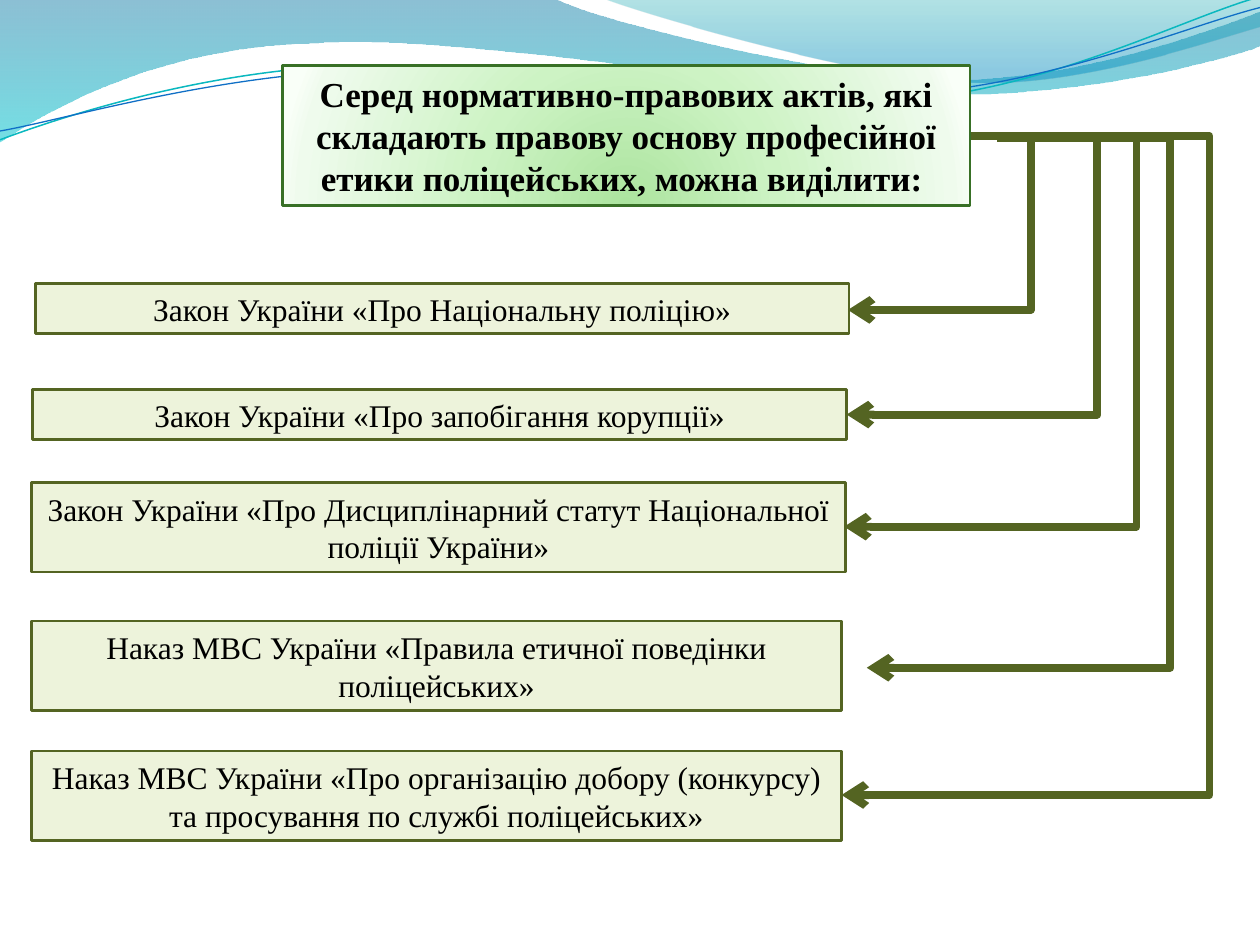
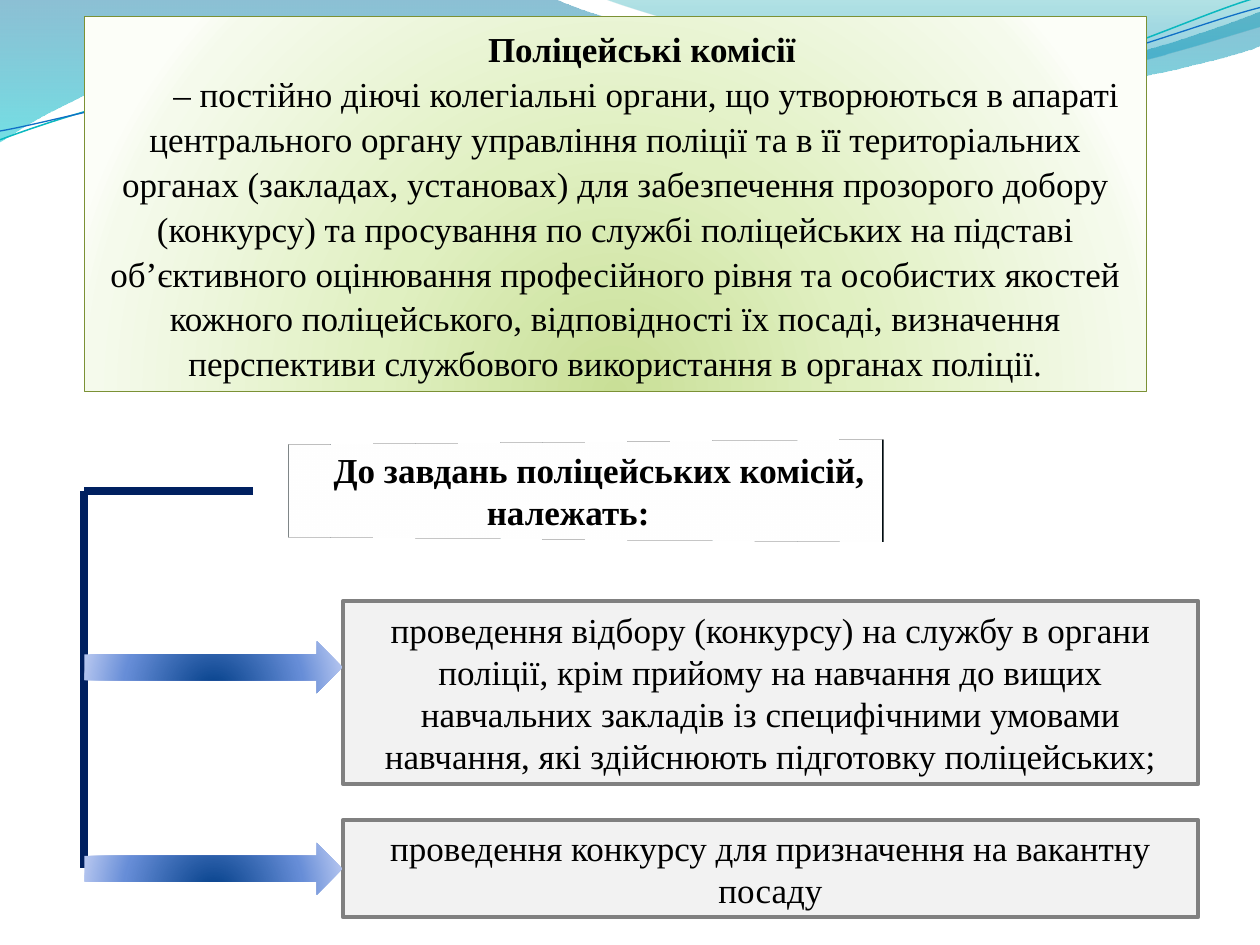
from lxml import etree
from pptx import Presentation
from pptx.dml.color import RGBColor
from pptx.enum import shapes, text
from pptx.oxml import ns
from pptx.util import Inches, Pt

FONT = "Times New Roman"
COLORS = {
    "black": "000000", "teal_line": "0AB8BF", "blue_line": "0F6FC6",
    "title_line": "387026", "law_fill": "EDF3DB", "law_line": "546422",
    "definition_line": "7B9135", "plate": "DBF5F9", "plate_line": "03495C",
    "task_fill": "F2F2F2", "task_line": "808080", "navy": "002060",
}
GRADIENTS = {
    "main_wave": [(0, "0074A1", 45), (100, "00C6CF", 55)],
    "right_wave": [(0, "00A1A9", 30), (80, "008BBF", 45)],
    "green": [(0, "ACE49F", 100), (43, "CDF3C4", 100), (93, "EFFBED", 100), (100, "F9FFF8", 100)],
    "olive": [(0, "C9DF97", 100), (43, "E0F0C1", 100), (93, "F5FAEC", 100), (100, "FCFEF8", 100)],
    "blue": [(0, "003D87", 100), (68, "668DD7", 100), (100, "B3C4EF", 100)],
}
FILLED_WAVES = [
    ("main_wave", (0, 0), [
        [(4.4, -0.01)],
        [(4.76, 0.17), (6.64, 0.63), (7.58, 0.63)],
        [(8.53, 0.63), (9.58, 0.26), (10, 0.09)],
        [(10.01, 0.36)],
        [(9.83, 0.44), (8.7, 0.76), (7.46, 0.75)],
        [(6.22, 0.75), (3.82, 0.28), (2.57, 0.34)],
        [(1.29, 0.36), (0.46, 0.83), (-0.01, 1.13)],
        [(0, 0)]]),
    ("right_wave", (4.79, -0.01), [
        [(5.09, 0.11), (6.82, 0.62), (7.69, 0.65)],
        [(8.56, 0.69), (9.61, 0.32), (10, 0.21)],
        [(10, 0)],
        [(4.79, -0.01)]]),
]
LINE_WAVES = [
    ("teal_line", 0.85, (0, 1.11), [
        [(0.48, 0.93), (1.58, 0.57), (2.77, 0.52)],
        [(3.95, 0.47), (5.93, 0.89), (7.13, 0.8)],
        [(8.33, 0.71), (9.38, 0.15), (9.98, -0.02)]]),
    ("blue_line", 0.75, (0, 1.04), [
        [(0.47, 0.96), (1.64, 0.61), (2.83, 0.56)],
        [(4.03, 0.51), (5.97, 0.84), (7.17, 0.75)],
        [(8.36, 0.67), (9.41, 0.21), (10, 0.06)]]),
]
LAWS = [
    ((0.28, 2.25, 6.46, 0.4), "Закон України «Про Національну поліцію»"),
    ((0.26, 3.09, 6.46, 0.4), "Закон України «Про запобігання корупції»"),
    ((0.25, 3.83, 6.46, 0.71), "Закон України «Про Дисциплінарний статут Національної поліції України»"),
    ((0.25, 4.93, 6.43, 0.71), "Наказ МВС України «Правила етичної поведінки поліцейських»"),
    ((0.25, 5.96, 6.43, 0.71),
     "Наказ МВС України «Про організацію добору (конкурсу) та просування по службі поліцейських»"),
]
LAW_ARROWS = [
    ((7.71, 1.08), 9.6, (6.68, 6.31)),
    ((7.91, 1.1), 9.29, (6.88, 5.3)),
    ((9.02, 1.1), 9.02, (6.7, 4.18)),
    ((8.71, 1.1), 8.71, (6.72, 3.29)),
    ((7.71, 1.08), 8.18, (6.73, 2.46)),
]
TASKS = [
    ((2.72, 4.77, 6.79, 1.45),
     "проведення відбору (конкурсу) на службу в органи поліції, крім прийому на навчання до вищих "
     "навчальних закладів із специфічними умовами навчання, які здійснюють підготовку поліцейських;"),
    ((2.72, 6.51, 6.79, 0.77), "проведення конкурсу для призначення на вакантну посаду"),
]
DEFINITION = (
    "– постійно діючі колегіальні органи, що утворюються в апараті центрального органу управління "
    "поліції та в її територіальних органах (закладах, установах) для забезпечення прозорого добору "
    "(конкурсу) та просування по службі поліцейських на підставі об’єктивного оцінювання професійного "
    "рівня та особистих якостей кожного поліцейського, відповідності їх посаді, визначення перспективи "
    "службового використання в органах поліції.")


def add_element(parent, tag, **attributes):
    """Append a DrawingML element with the given attributes."""
    values = {name: str(value) for name, value in attributes.items()}
    return etree.SubElement(parent, ns.qn(f"a:{tag}"), values)


def set_gradient(shape, name, radial=True):
    """Fill a shape with a named radial or downward gradient."""
    shape.fill.background()
    properties = shape._element.spPr
    gradient = etree.Element(ns.qn("a:gradFill"), rotWithShape="1")
    stops = add_element(gradient, "gsLst")
    for position, color, alpha in GRADIENTS[name]:
        stop = add_element(stops, "gs", pos=position * 1000)
        add_element(add_element(stop, "srgbClr", val=color), "alpha", val=alpha * 1000)
    if radial:
        circle = add_element(gradient, "path", path="circle")
        add_element(circle, "fillToRect", l=50000, t=130000, r=50000, b=-30000)
    else:
        add_element(gradient, "lin", ang=5400000, scaled=1)
    properties.replace(properties.find(ns.qn("a:noFill")), gradient)


def set_line(shape, color, width):
    """Outline a shape, or hide its outline when no colour is given."""
    if color is None:
        shape.line.fill.background()
        return
    shape.line.color.rgb = RGBColor.from_string(COLORS[color])
    shape.line.width = Pt(width)


def add_box(slide, box, fill, line=None, width=1.5, kind=shapes.MSO_SHAPE.RECTANGLE):
    """Add a preset shape with its fill and outline."""
    shape = slide.shapes.add_shape(kind, *map(Inches, box))
    shape.shadow.inherit = False
    if fill in GRADIENTS:
        set_gradient(shape, fill)
    else:
        shape.fill.solid()
        shape.fill.fore_color.rgb = RGBColor.from_string(COLORS[fill])
    set_line(shape, line, width)
    return shape


def add_text(shape, content, *, size=20, bold=False, indent=0, spacing=None, first=True):
    """Write one centred paragraph into a shape."""
    frame = shape.text_frame
    frame.word_wrap = True
    frame.auto_size = text.MSO_AUTO_SIZE.SHAPE_TO_FIT_TEXT
    frame.vertical_anchor = text.MSO_ANCHOR.MIDDLE
    paragraph = frame.paragraphs[0] if first else frame.add_paragraph()
    paragraph.alignment = text.PP_ALIGN.CENTER
    paragraph.line_spacing = spacing
    if indent:
        paragraph._p.get_or_add_pPr().set("indent", str(Inches(indent)))
    run = paragraph.add_run()
    run.text = content
    run.font.name = FONT
    run.font.size = Pt(size)
    run.font.bold = bold
    run.font.color.rgb = RGBColor.from_string(COLORS["black"])


def add_curve(slide, start, segments):
    """Add a freeform of straight and cubic segments."""
    builder = slide.shapes.build_freeform(*map(Inches, start))
    points = [(Inches(x), Inches(y)) for segment in segments for x, y in segment]
    builder.add_line_segments(points, close=segments[-1][-1] == start)
    shape = builder.convert_to_shape()
    shape.shadow.inherit = False
    lines = iter(list(shape._element.spPr.iter(ns.qn("a:lnTo"))))
    for segment in segments:
        parts = [next(lines) for _ in segment]
        if len(parts) == 3:
            curve = etree.Element(ns.qn("a:cubicBezTo"))
            parts[0].addprevious(curve)
            for part in parts:
                curve.append(part[0])
                part.getparent().remove(part)
    return shape


def add_line(slide, start, end, color, width=4.5, kind=shapes.MSO_CONNECTOR.STRAIGHT):
    """Add a connector without a shadow."""
    connector = slide.shapes.add_connector(kind, *map(Inches, (*start, *end)))
    set_line(connector, color, width)
    add_element(connector._element.spPr, "effectLst")
    return connector


def add_bent_arrow(slide, start, turn_x, end, color):
    """Add an elbow arrow whose vertical part stands at turn_x."""
    connector = add_line(slide, start, end, color, kind=shapes.MSO_CONNECTOR.ELBOW)
    share = round((start[0] - turn_x) / (start[0] - end[0]) * 100000)
    geometry = connector._element.spPr.find(ns.qn("a:prstGeom"))
    guides = geometry.find(ns.qn("a:avLst"))
    if guides is None:
        guides = add_element(geometry, "avLst")
    add_element(guides, "gd", name="adj1", fmla=f"val {share}")
    add_element(connector.line._get_or_add_ln(), "tailEnd", type="arrow")


def add_master_waves(presentation, slide):
    """Draw the wave band once and move it to the slide master."""
    waves = []
    for gradient, start, segments in FILLED_WAVES:
        wave = add_curve(slide, start, segments)
        set_gradient(wave, gradient, radial=False)
        set_line(wave, None, 0)
        waves.append(wave)
    for color, width, start, segments in LINE_WAVES:
        wave = add_curve(slide, start, segments)
        wave.fill.background()
        set_line(wave, color, width)
        waves.append(wave)
    tree = presentation.slide_master.shapes._spTree
    for position, wave in enumerate(waves, start=2):
        tree.insert(position, wave._element)


def tilt(shape):
    """Turn a shape to the left in perspective and give it a thin depth."""
    properties = shape._element.spPr
    scene = add_element(properties, "scene3d")
    add_element(scene, "camera", prst="perspectiveLeft")
    add_element(scene, "lightRig", rig="threePt", dir="t")
    add_element(properties, "sp3d", extrusionH=Pt(6))


def build_laws(slide):
    """Build the slide that lists the legal acts."""
    title = add_box(slide, (2.24, 0.52, 5.46, 1.11), "green", "title_line")
    add_text(title, "Серед нормативно-правових актів, які складають правову основу "
                    "професійної етики поліцейських, можна виділити: ", bold=True)
    for box, law in LAWS:
        add_text(add_box(slide, box, "law_fill", "law_line"), law, size=18)
    for start, turn_x, end in LAW_ARROWS:
        add_bent_arrow(slide, start, turn_x, end, "law_line")


def build_commissions(slide):
    """Build the slide on police commissions and their tasks."""
    definition = add_box(slide, (0.67, 0.13, 8.43, 2.98), "olive", "definition_line", 0.75)
    add_text(definition, "Поліцейські комісії ", bold=True, indent=0.49, spacing=1.07)
    add_text(definition, DEFINITION, indent=0.49, spacing=1.07, first=False)
    heading = add_box(slide, (2.01, 3.51, 5, 0.77), "plate", "plate_line")
    tilt(heading)
    add_text(heading, "До завдань поліцейських комісій, належать:", bold=True, indent=0.49)
    for box, task in TASKS:
        add_text(add_box(slide, box, "task_fill", "task_line", 2.25), task)
    corner = (0.67, 3.9)
    add_line(slide, (2.01, 3.9), corner, "navy")
    add_line(slide, corner, (0.67, 6.89), "navy")
    for top in (5.09, 6.69):
        add_box(slide, (0.67, top, 2.05, 0.41), "blue", kind=shapes.MSO_SHAPE.RIGHT_ARROW)


def main():
    """Build both slides and save the presentation."""
    presentation = Presentation()
    presentation.slide_width, presentation.slide_height = Inches(10), Inches(7.5)
    blank = presentation.slide_layouts[6]
    laws, commissions = [presentation.slides.add_slide(blank) for _ in range(2)]
    add_master_waves(presentation, laws)
    build_laws(laws)
    build_commissions(commissions)
    presentation.save("out.pptx")


if __name__ == "__main__":
    main()
